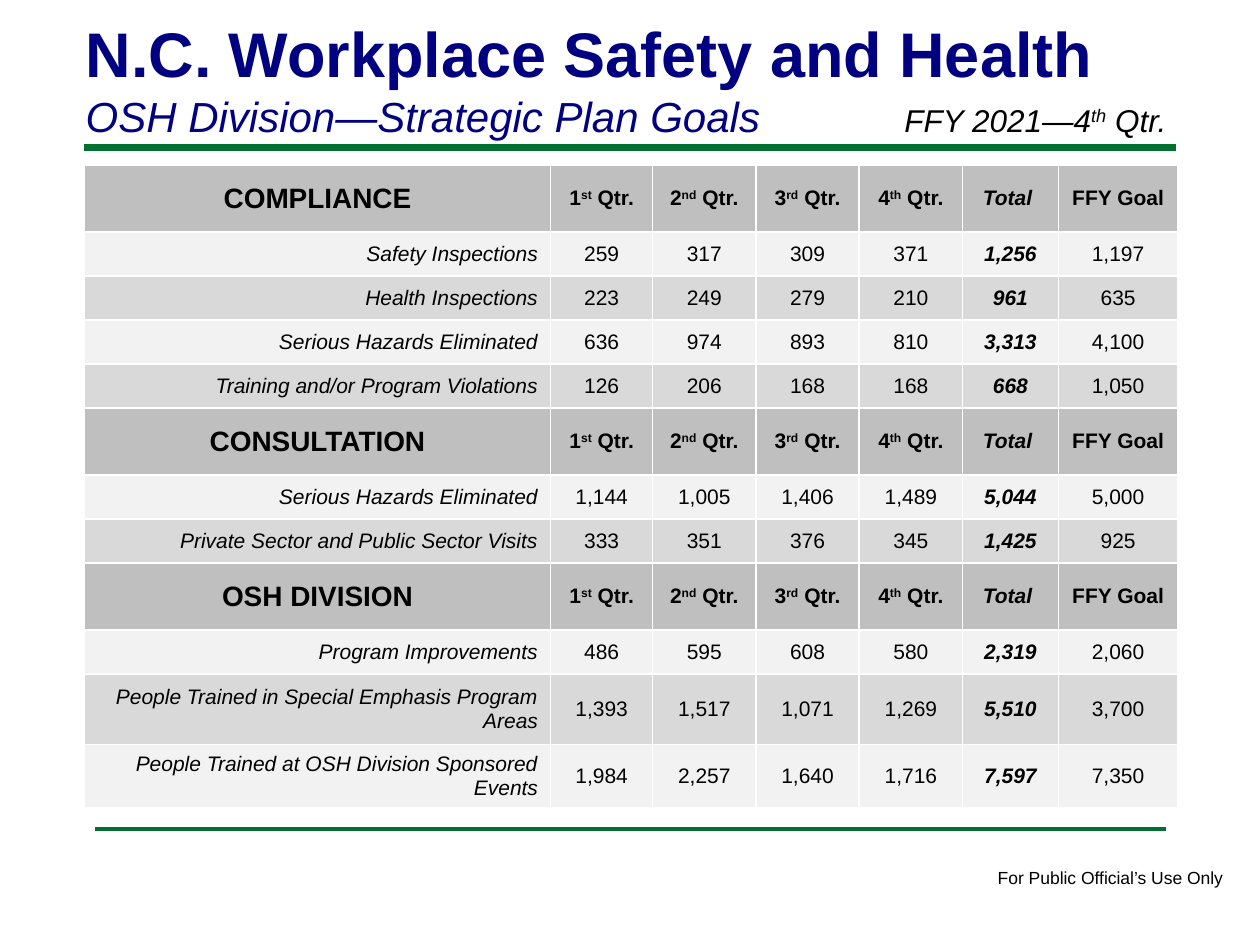
from lxml.etree import SubElement
from pptx import Presentation
from pptx.dml.color import RGBColor
from pptx.enum.shapes import MSO_CONNECTOR
from pptx.enum.text import MSO_ANCHOR, PP_ALIGN
from pptx.oxml.ns import qn
from pptx.util import Inches, Pt

COLORS = {"navy": "000080", "green": "007030", "black": "000000", "white": "FFFFFF",
          "header": "BFBFBF", "light": "F2F2F2", "dark": "D9D9D9"}
TITLE = "N.C. Workplace Safety and Health"
SUBTITLE = "OSH Division—Strategic Plan Goals"
PERIOD = "FFY 2021—4^th^ Qtr."
FOOTER = "For Public Official’s Use Only"
HEADINGS = ["1^st^ Qtr.", "2^nd^ Qtr.", "3^rd^ Qtr.", "4^th^ Qtr.", "Total ", "FFY Goal"]
SECTIONS = {
    "COMPLIANCE": [
        ("Safety Inspections", "259", "317", "309", "371", "1,256", "1,197"),
        ("Health Inspections", "223", "249", "279", "210", "961", "635"),
        ("Serious Hazards Eliminated", "636", "974", "893", "810", "3,313", "4,100"),
        ("Training and/or Program Violations", "126", "206", "168", "168", "668", "1,050"),
    ],
    "CONSULTATION": [
        ("Serious Hazards Eliminated", "1,144", "1,005", "1,406", "1,489", "5,044", "5,000"),
        ("Private Sector and Public Sector Visits", "333", "351", "376", "345", "1,425", "925"),
    ],
    "OSH DIVISION": [
        ("Program Improvements", "486", "595", "608", "580", "2,319", "2,060"),
        ("People Trained in Special Emphasis Program Areas",
         "1,393", "1,517", "1,071", "1,269", "5,510", "3,700"),
        ("People Trained at OSH Division Sponsored Events",
         "1,984", "2,257", "1,640", "1,716", "7,597", "7,350"),
    ],
}
COLUMN_WIDTHS = [3.7, 0.81, 0.82, 0.82, 0.82, 0.76, 0.95]
HEADER_HEIGHT, ROW_HEIGHT = 0.53, 0.35
TALL_ROWS = {10: 0.56, 11: 0.48}
TOTAL_COLUMN = 5
RULES = [(0.67, 9.33, 1.17, 4), (0.75, 9.25, 6.58, 2)]


def write(paragraph, text, color="black", align=PP_ALIGN.LEFT, **font_format):
    """Write text into a paragraph, raising the parts between carets."""
    paragraph.alignment = align
    for index, part in enumerate(text.split("^")):
        run = paragraph.add_run()
        run.text = part
        run.font.color.rgb = RGBColor.from_string(COLORS[color])
        for name, value in {"name": "Arial", "bold": False, "italic": False, **font_format}.items():
            setattr(run.font, name, value)
        if index % 2:
            run.font._element.set("baseline", "30000")


def add_rule(slide, left, right, top, width):
    """Draw a green horizontal line without a shadow."""
    line = slide.shapes.add_connector(
        MSO_CONNECTOR.STRAIGHT, Inches(left), Inches(top), Inches(right), Inches(top))
    line.line.color.rgb = RGBColor.from_string(COLORS["green"])
    line.line.width = Pt(width)
    SubElement(line._element.spPr, qn("a:effectLst"))


def add_text(slide, box, text, wrap, **text_format):
    """Add a text box holding one paragraph."""
    frame = slide.shapes.add_textbox(*map(Inches, box)).text_frame
    frame.word_wrap = wrap
    write(frame.paragraphs[0], text, **text_format)


def fill_cell(cell, text, fill, **text_format):
    """Give a cell white borders, a fill and its text."""
    properties = cell._tc.get_or_add_tcPr()
    for side in ("lnL", "lnR", "lnT", "lnB"):
        border = SubElement(properties, qn(f"a:{side}"), w=str(Pt(1)))
        solid = SubElement(border, qn("a:solidFill"))
        SubElement(solid, qn("a:srgbClr"), val=COLORS["white"])
    cell.fill.solid()
    cell.fill.fore_color.rgb = RGBColor.from_string(COLORS[fill])
    cell.vertical_anchor = MSO_ANCHOR.MIDDLE
    write(cell.text_frame.paragraphs[0], text, **text_format)


def add_goals(slide):
    """Add the table of goals, section by section."""
    rows = []
    for section, goals in SECTIONS.items():
        rows.append(("header", [section, *HEADINGS]))
        rows += [(("light", "dark")[index % 2], goal) for index, goal in enumerate(goals)]
    heights = [HEADER_HEIGHT if fill == "header" else TALL_ROWS.get(index, ROW_HEIGHT)
               for index, (fill, _) in enumerate(rows)]
    table = slide.shapes.add_table(
        len(rows), len(COLUMN_WIDTHS), Inches(0.67), Inches(1.31),
        Inches(sum(COLUMN_WIDTHS)), Inches(sum(heights))).table
    for column, width in zip(table.columns, COLUMN_WIDTHS):
        column.width = Inches(width)
    for row, height, (fill, texts) in zip(table.rows, heights, rows):
        row.height = Inches(height)
        header = fill == "header"
        for index, (cell, text) in enumerate(zip(row.cells, texts)):
            label, total = index == 0, index == TOTAL_COLUMN
            fill_cell(cell, text, fill,
                      align=PP_ALIGN.RIGHT if label and not header else PP_ALIGN.CENTER,
                      size=Pt(16 if label and header else 12),
                      bold=header or total,
                      italic=total or (label and not header))


def main():
    """Build the slide of strategic plan goals."""
    presentation = Presentation()
    presentation.slide_width, presentation.slide_height = Inches(10), Inches(7.5)
    slide = presentation.slides.add_slide(presentation.slide_layouts[5])
    for rule in RULES:
        add_rule(slide, *rule)
    add_text(slide, (7.82, 6.83, 2.01, 0.27), FOOTER, False, size=Pt(10))

    title = slide.shapes.title
    title.left, title.top, title.width, title.height = map(Inches, (0.58, 0.06, 8.25, 1.11))
    frame = title.text_frame
    frame.word_wrap = True
    frame.vertical_anchor = MSO_ANCHOR.MIDDLE
    write(frame.paragraphs[0], TITLE, "navy", size=Pt(36), bold=True)
    write(frame.add_paragraph(), SUBTITLE, "navy", size=Pt(24), italic=True)

    add_goals(slide)
    add_text(slide, (7.08, 0.75, 2.5, 0.4), PERIOD, True, size=Pt(18), italic=True)
    presentation.save("out.pptx")


if __name__ == "__main__":
    main()
